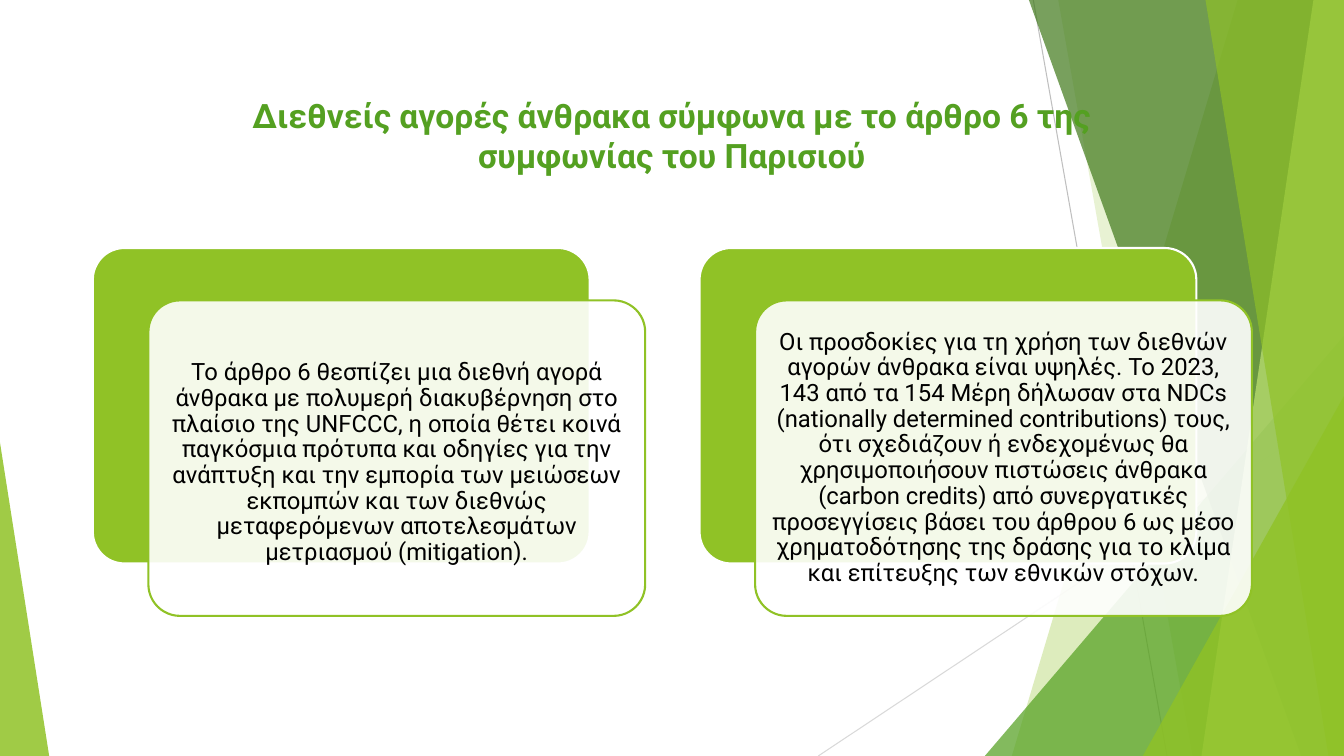
"""Build a slide on carbon markets with two layered cards."""
import dataclasses
import typing

import lxml.etree
import pptx
import pptx.dml.color
import pptx.enum.shapes
import pptx.enum.text
import pptx.oxml.ns
import pptx.util

Cm = pptx.util.Cm
Color = pptx.dml.color.RGBColor
Kind = pptx.enum.shapes.MSO_SHAPE

WHITE = Color(0xFF, 0xFF, 0xFF)
BLACK = Color(0, 0, 0)
LIME = Color(0x90, 0xC2, 0x26)
PALE = Color(0xC0, 0xE4, 0x74)
GREEN = Color(0x54, 0xA0, 0x21)
DARK = Color(0x3F, 0x78, 0x19)
GREY = Color(0xBF, 0xBF, 0xBF)
SILVER = Color(0xD9, 0xD9, 0xD9)

FONT = "Roboto"
WIDTH, HEIGHT = 33.87, 19.05
CARD_W, CARD_H = 12.52, 7.95
CARD_TOP = 6.25
SHIFT_X, SHIFT_Y = 1.4, 1.32
INSET = 0.23


@dataclasses.dataclass(frozen=True)
class Ray:
    start: tuple[float, float]
    end: tuple[float, float]
    color: Color


@dataclasses.dataclass(frozen=True)
class Band:
    top_x: float
    low_x: float
    color: Color
    alpha: int


@dataclasses.dataclass(frozen=True)
class Wedge:
    left: float
    top: float
    width: float
    apex: float
    color: Color
    alpha: int


@dataclasses.dataclass(frozen=True)
class Card:
    left: float
    drop: float
    text: str


RAYS = [
    Ray((26.04, 0), (29.41, HEIGHT), GREY),
    Ray((WIDTH, 10.24), (20.62, HEIGHT), SILVER),
]

FACETS: list[Band | Wedge] = [
    Band(31.19, 25.5, LIME, 30),
    Band(26.67, 30.05, LIME, 20),
    Wedge(24.82, 8.46, 9.05, 1, GREEN, 72),
    Band(25.93, 32.79, DARK, 70),
    Band(33.1, 30.28, PALE, 70),
    Band(30.38, 33.48, LIME, 65),
    Wedge(28.8, 9.98, 5.07, 1, LIME, 80),
    Wedge(0, 11.15, 1.24, 0, LIME, 85),
]

TITLE = "Διεθνείς αγορές άνθρακα σύμφωνα με το άρθρο 6 της συμφωνίας του Παρισιού"

CARDS = [
    Card(
        2.34,
        0.12,
        "Το άρθρο 6 θεσπίζει μια διεθνή αγορά άνθρακα με πολυμερή διακυβέρνηση "
        "στο πλαίσιο της UNFCCC, η οποία θέτει κοινά παγκόσμια πρότυπα και "
        "οδηγίες για την ανάπτυξη και την εμπορία των μειώσεων εκπομπών και των "
        "διεθνώς μεταφερόμενων αποτελεσμάτων μετριασμού (mitigation).",
    ),
    Card(
        17.63,
        0,
        "Οι προσδοκίες για τη χρήση των διεθνών αγορών άνθρακα είναι υψηλές. "
        "Το 2023, 143 από τα 154 Μέρη δήλωσαν στα NDCs (nationally determined "
        "contributions) τους, ότι σχεδιάζουν ή ενδεχομένως θα χρησιμοποιήσουν "
        "πιστώσεις άνθρακα (carbon credits) από συνεργατικές προσεγγίσεις βάσει "
        "του άρθρου 6 ως μέσο χρηματοδότησης της δράσης για το κλίμα και "
        "επίτευξης των εθνικών στόχων.",
    ),
]


def paint(shape: typing.Any, color: Color, alpha: int, edge: Color | None = None) -> None:
    """Fill a shape with a partly clear colour and set its edge."""
    shape.shadow.inherit = False
    shape.fill.solid()
    shape.fill.fore_color.rgb = color
    if alpha < 100:
        tone = shape.fill._xPr.find(".//" + pptx.oxml.ns.qn("a:srgbClr"))
        veil = lxml.etree.SubElement(tone, pptx.oxml.ns.qn("a:alpha"))
        veil.set("val", str(alpha * 1000))
    if edge is None:
        shape.line.fill.background()
    else:
        shape.line.color.rgb = edge
        shape.line.width = pptx.util.Pt(1.5)


def draw_ray(shapes: typing.Any, ray: Ray) -> None:
    """Draw one thin line."""
    ends = [Cm(value) for value in ray.start + ray.end]
    line = shapes.add_connector(pptx.enum.shapes.MSO_CONNECTOR.STRAIGHT, *ends)
    line.line.color.rgb = ray.color
    line.line.width = pptx.util.Pt(0.75)
    lxml.etree.SubElement(line._element.spPr, pptx.oxml.ns.qn("a:effectLst"))


def draw_facet(shapes: typing.Any, facet: Band | Wedge) -> None:
    """Draw a full-height band or a triangle standing on the lower edge."""
    if isinstance(facet, Band):
        pen = shapes.build_freeform(Cm(facet.top_x), 0)
        rest = [(WIDTH, 0), (WIDTH, HEIGHT), (facet.low_x, HEIGHT)]
        pen.add_line_segments([(Cm(x), Cm(y)) for x, y in rest])
        shape = pen.convert_to_shape()
    else:
        box = (facet.left, facet.top, facet.width, HEIGHT - facet.top)
        shape = shapes.add_shape(Kind.ISOSCELES_TRIANGLE, *map(Cm, box))
        shape.adjustments[0] = facet.apex
    paint(shape, facet.color, facet.alpha)


def add_text(shapes: typing.Any, box: tuple[float, ...], text: str, size: int, color: Color) -> typing.Any:
    """Add a centred text box and return its frame."""
    frame = shapes.add_textbox(*map(Cm, box)).text_frame
    frame.word_wrap = True
    para = frame.paragraphs[0]
    para.text = text
    para.alignment = pptx.enum.text.PP_ALIGN.CENTER
    para.font.name = FONT
    para.font.size = pptx.util.Pt(size)
    para.font.color.rgb = color
    return frame


def draw_card(shapes: typing.Any, card: Card) -> None:
    """Draw a green plate, the clear plate over it and the text."""
    left, top = card.left + SHIFT_X, CARD_TOP + SHIFT_Y
    plates = [
        (card.left, CARD_TOP, LIME, 100, WHITE),
        (left, top, WHITE, 90, LIME),
    ]
    for x, y, color, alpha, edge in plates:
        plate = shapes.add_shape(Kind.ROUNDED_RECTANGLE, Cm(x), Cm(y), Cm(CARD_W), Cm(CARD_H))
        plate.adjustments[0] = 0.1
        paint(plate, color, alpha, edge)
    box = (left + INSET, top + INSET + card.drop, CARD_W - 2 * INSET, CARD_H - 2 * INSET)
    frame = add_text(shapes, box, card.text, 17, BLACK)
    frame.vertical_anchor = pptx.enum.text.MSO_ANCHOR.MIDDLE
    frame.margin_left = frame.margin_right = Cm(0.18)
    frame.margin_top = frame.margin_bottom = Cm(0.18)
    frame.paragraphs[0].line_spacing = 0.9


def main() -> None:
    """Build and save the slide."""
    deck = pptx.Presentation()
    deck.slide_width, deck.slide_height = Cm(WIDTH), Cm(HEIGHT)
    shapes = deck.slides.add_slide(deck.slide_layouts[6]).shapes
    for ray in RAYS:
        draw_ray(shapes, ray)
    for facet in FACETS:
        draw_facet(shapes, facet)
    for card in CARDS:
        draw_card(shapes, card)
    title = add_text(shapes, (5.59, 2.26, 22.68, 2.31), TITLE, 24, GREEN)
    title.paragraphs[0].font.bold = True
    deck.save("out.pptx")


if __name__ == "__main__":
    main()
